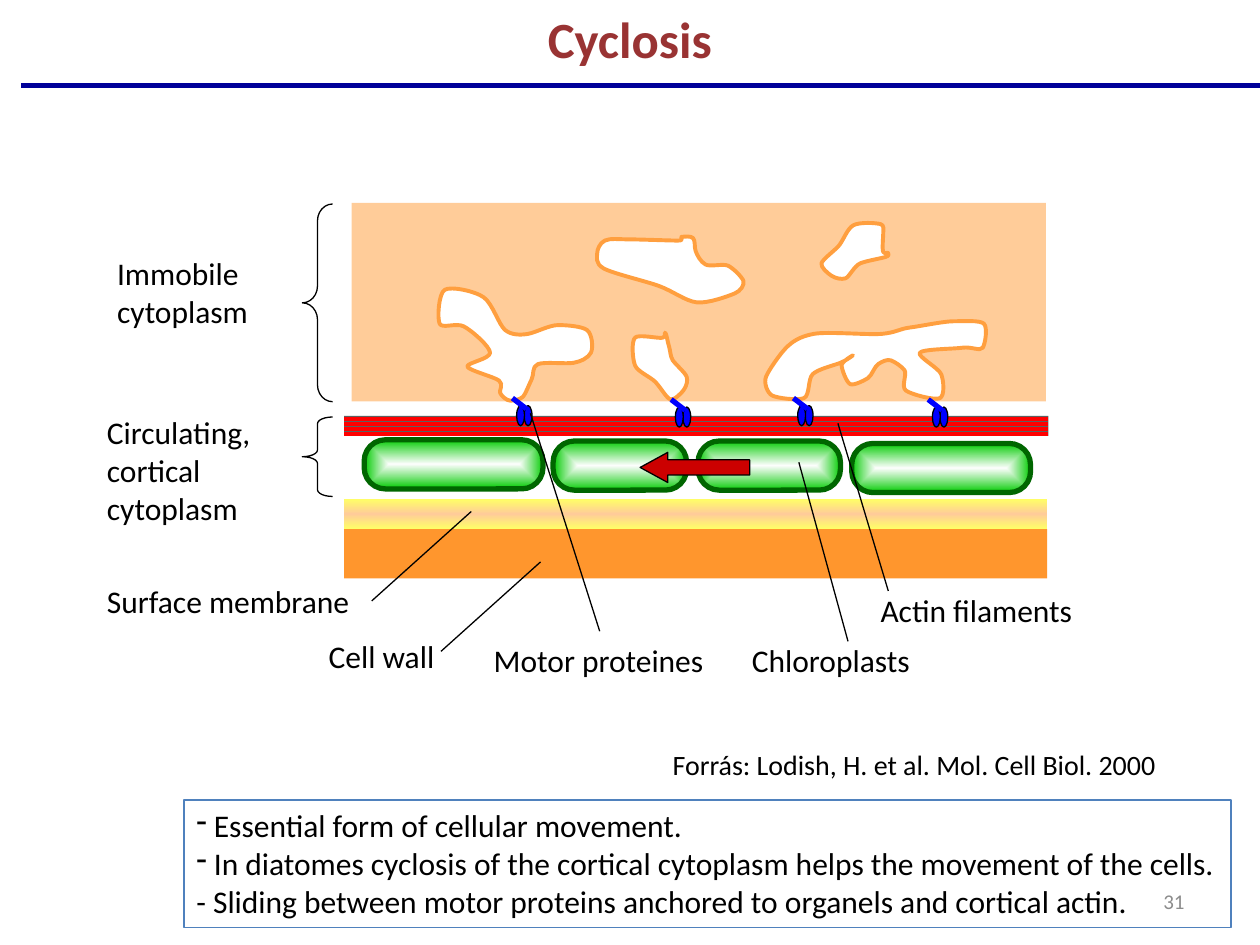
"""Build the Cyclosis slide: a labelled cell cortex diagram with a summary box."""
from lxml.etree import SubElement
from pptx import Presentation
from pptx.dml.color import RGBColor
from pptx.enum.dml import MSO_PATTERN
from pptx.enum.shapes import MSO_CONNECTOR, MSO_SHAPE as SHAPE
from pptx.enum.text import MSO_ANCHOR as ANCHOR, MSO_AUTO_SIZE as AUTO_SIZE, PP_ALIGN as ALIGN
from pptx.oxml.ns import qn
from pptx.util import Pt

FONT = "Calibri"
BLACK = RGBColor(0x00, 0x00, 0x00)
WHITE = RGBColor(0xFF, 0xFF, 0xFF)
GREY = RGBColor(0x8C, 0x8C, 0x8C)
MAROON = RGBColor(0x99, 0x33, 0x33)
NAVY = RGBColor(0x00, 0x00, 0x99)
STEEL = RGBColor(0x4F, 0x81, 0xBD)
GREEN = RGBColor(0x00, 0xCC, 0x00)
DARK_GREEN = RGBColor(0x00, 0x66, 0x00)
RED = RGBColor(0xFF, 0x00, 0x00)
DARK_RED = RGBColor(0xCC, 0x00, 0x00)
SLATE = RGBColor(0x5F, 0x5F, 0x5F)
PEACH = RGBColor(0xFF, 0xCC, 0x99)
YELLOW = RGBColor(0xFF, 0xFF, 0x66)
ORANGE = RGBColor(0xFF, 0x96, 0x2D)
LIGHT_ORANGE = RGBColor(0xFF, 0x9F, 0x3F)
BLUE = RGBColor(0x00, 0x00, 0xFF)

TITLE = "Cyclosis"
LABELS = [
    (["Immobile", "cytoplasm"], (59.8, 141.8, 90, 51.1)),
    (["Circulating,", "cortical", "cytoplasm"], (54, 232.6, 101.5, 72.7)),
    (["Actin filaments"], (496.1, 334.1, 125.3, 28.8)),
    (["Chloroplasts"], (422.6, 362.9, 105.8, 28.8)),
    (["Cell wall"], (180.7, 360.7, 75.6, 28.8)),
    (["Surface membrane"], (54, 329, 154.8, 28.8)),
    (["Motor proteines"], (275, 362.9, 135.4, 28.8)),
]
SOURCE = "Forrás: Lodish, H. et al. Mol. Cell Biol. 2000"
SUMMARY = [
    " Essential form of cellular movement.",
    " In diatomes cyclosis of the cortical cytoplasm helps the movement of the cells.",
    "- Sliding between motor proteins anchored to organels and cortical actin.",
]
DASHED_COUNT = 2
PAGE_NUMBER = "31"

CHLOROPLASTS = [(208.1, 251.3, 102.2), (316.1, 252, 76.3), (398.9, 252, 81.4), (486.7, 253.4, 102.2)]
MOTORS = [(295.2, 231.8), (385.9, 232.6), (455.8, 231.8), (532.8, 232.6)]
BRACES = [((172.8, 116.6, 17.3, 113), 0.556), ((172.8, 238.3, 17.3, 45.4), 0.222)]
POINTERS = [
    ((212.4, 343.4), (269.3, 292.3)),
    ((252, 372.2), (308.9, 321.1)),
    ((507.6, 337.7), (478.8, 241.9)),
    ((484.6, 366.5), (456.5, 264.2)),
    ((342.7, 360.7), (303.1, 236.2)),
]
ORGANELLE_UNIT = Pt(0.72)
SMOOTHING = 1 / 7
ORGANELLES = [
    [(396, 302), (371, 291), (389, 280), (368, 259), (349, 257), (353, 230), (384, 236), (401, 262),
     (419, 265), (443, 258), (466, 262), (469, 280), (455, 288), (427, 289), (422, 301), (415, 315),
     (405, 318), (397, 312)],
    [(538, 191), (499, 190), (480, 191), (474, 201), (479, 213), (523, 227), (553, 240), (583, 233),
     (590, 223), (578, 211), (560, 210), (552, 199), (550, 189), (541, 188)],
    [(677, 282), (668, 290), (675, 305), (689, 300), (697, 289), (707, 286), (718, 294), (719, 310),
     (746, 316), (747, 297), (730, 280), (764, 276), (780, 276), (781, 257), (757, 255), (722, 260),
     (700, 265), (646, 265), (624, 276), (608, 299), (613, 314), (638, 316), (645, 297), (667, 288)],
    [(701, 200), (701, 185), (699, 178), (677, 179), (665, 196), (652, 209), (660, 219), (671, 221),
     (683, 209), (703, 204), (705, 201)],
    [(526, 268), (504, 268), (504, 290), (520, 303), (532, 317), (543, 309), (545, 299), (534, 286),
     (531, 275), (528, 264)],
]


def finish(shape, fill=None, line=None, width=0.75):
    shape.shadow.inherit = False
    if fill is not None:
        shape.fill.solid()
        shape.fill.fore_color.rgb = fill
    if line is None:
        shape.line.fill.background()
    else:
        shape.line.color.rgb = line
        shape.line.width = Pt(width)
    return shape


def add_preset(shapes, kind, box, adjustments=(), **look):
    shape = shapes.add_shape(kind, *map(Pt, box))
    for index, value in enumerate(adjustments):
        shape.adjustments[index] = value
    return finish(shape, **look)


def add_line(shapes, start, end, color=BLACK, width=0.75):
    line = shapes.add_connector(MSO_CONNECTOR.STRAIGHT, *map(Pt, start + end))
    line.line.color.rgb = color
    line.line.width = Pt(width)
    SubElement(line._element.spPr, qn("a:effectLst"))


def set_gradient(shape, stops, radial=False):
    gradient = shape._element.spPr.makeelement(qn("a:gradFill"), {"rotWithShape": "1"})
    stop_list = SubElement(gradient, qn("a:gsLst"))
    for position, color, alpha in stops:
        stop = SubElement(stop_list, qn("a:gs"), pos=str(position * 1000))
        tint = SubElement(stop, qn("a:srgbClr"), val=str(color))
        if alpha < 100:
            SubElement(tint, qn("a:alpha"), val=str(alpha * 1000))
    if radial:
        focus = SubElement(gradient, qn("a:path"), {"path": "shape"})
        SubElement(focus, qn("a:fillToRect"), dict.fromkeys("ltrb", "50000"))
    else:
        SubElement(gradient, qn("a:lin"), ang="5400000", scaled="1")
    shape._element.spPr.insert(2, gradient)


def smooth_curve(points):
    curve = []
    for index, start in enumerate(points):
        before = points[index - 1]
        end, after = (points[(index + step) % len(points)] for step in (1, 2))
        curve.append(tuple(s + (e - b) * SMOOTHING for b, s, e in zip(before, start, end)))
        curve.append(tuple(e - (a - s) * SMOOTHING for s, e, a in zip(start, end, after)))
        curve.append(end)
    return curve


def add_organelle(shapes, points):
    builder = shapes.build_freeform(*points[0], scale=ORGANELLE_UNIT)
    builder.add_line_segments(smooth_curve(points), close=True)
    shape = finish(builder.convert_to_shape(), WHITE, LIGHT_ORANGE, 2.25)
    segments = shape._element.xpath(".//a:lnTo")
    for triple in zip(segments[::3], segments[1::3], segments[2::3]):
        curve = triple[0].makeelement(qn("a:cubicBezTo"))
        triple[0].addprevious(curve)
        for segment in triple:
            curve.append(segment[0])
            segment.getparent().remove(segment)


def style_text(frame, size, color=BLACK, align=ALIGN.LEFT, bold=False):
    for paragraph in frame.paragraphs:
        paragraph.alignment = align
        for run in paragraph.runs:
            run.font.name, run.font.size, run.font.bold = FONT, Pt(size), bold
            run.font.color.rgb = color


def add_text(shapes, lines, box, size, wrap=False, color=BLACK, align=ALIGN.LEFT):
    shape = shapes.add_textbox(*map(Pt, box))
    frame = shape.text_frame
    frame.text = "\n".join(lines)
    frame.word_wrap = wrap
    frame.auto_size = AUTO_SIZE.NONE if wrap else AUTO_SIZE.SHAPE_TO_FIT_TEXT
    style_text(frame, size, color, align)
    return shape


def main():
    presentation = Presentation()
    presentation.slide_width, presentation.slide_height = Pt(720), Pt(540)
    slide = presentation.slides.add_slide(presentation.slide_layouts[5])
    shapes = slide.shapes

    title = shapes.title
    title.left, title.top, title.width, title.height = map(Pt, (36, 0.7, 648, 54))
    title.text_frame.text = TITLE
    title.text_frame.vertical_anchor = ANCHOR.TOP
    title.text_frame.auto_size = AUTO_SIZE.NONE
    style_text(title.text_frame, 29, MAROON, ALIGN.CENTER, bold=True)
    add_line(shapes, (12.2, 49), (720, 49), NAVY, 3)

    for lines, box in LABELS:
        finish(add_text(shapes, lines, box, 18), WHITE)
    add_text(shapes, [SOURCE], (377.3, 423.4, 323.3, 26.6), 16)

    for left, top, width in CHLOROPLASTS:
        chloroplast = add_preset(shapes, SHAPE.ROUNDED_RECTANGLE, (left, top, width, 28.1), [0.432],
                                 line=DARK_GREEN, width=3)
        set_gradient(chloroplast, [(0, WHITE, 92), (100, GREEN, 100)], radial=True)
    actin = add_preset(shapes, SHAPE.RECTANGLE, (196.6, 237.6, 402.5, 11.5))
    actin.fill.patterned()
    actin.fill.pattern = MSO_PATTERN.DARK_HORIZONTAL
    actin.fill.fore_color.rgb, actin.fill.back_color.rgb = RED, SLATE
    add_preset(shapes, SHAPE.RECTANGLE, (200.9, 115.9, 396.7, 113.4), fill=PEACH)
    wall = shapes.add_group_shape().shapes
    membrane = add_preset(wall, SHAPE.RECTANGLE, (196.6, 285.1, 401.8, 17.3))
    set_gradient(membrane, [(0, YELLOW, 100), (50, PEACH, 100), (100, YELLOW, 100)])
    add_preset(wall, SHAPE.RECTANGLE, (196.6, 302.4, 401.8, 28.1), fill=ORANGE)

    for points in ORGANELLES:
        add_organelle(shapes, points)
    for left, top in MOTORS:
        motor = shapes.add_group_shape().shapes
        for offset in (4.3, 0):
            add_preset(motor, SHAPE.OVAL, (left + offset, top, 4.5, 11.5), fill=BLUE, line=BLACK)
        add_line(motor, (left + 5.6, top + 1.8), (left - 2.4, top - 4.3), BLUE, 3)
    for box, curl in BRACES:
        add_preset(shapes, SHAPE.LEFT_BRACE, box, [curl, 0.5], line=BLACK).fill.background()
    for start, end in POINTERS:
        add_line(shapes, start, end)
    add_preset(shapes, SHAPE.LEFT_ARROW, (365.8, 258.5, 62.6, 17.3), [0.5, 0.917], fill=DARK_RED, line=BLACK)

    summary = finish(add_text(shapes, SUMMARY, (105.1, 457.2, 598.3, 72.7), 18, wrap=True), line=STEEL)
    for paragraph in summary.text_frame.paragraphs[:DASHED_COUNT]:
        SubElement(paragraph._p.get_or_add_pPr(), qn("a:buChar"), char="-")
    number = add_text(shapes, [PAGE_NUMBER], (516.2, 500.4, 167.8, 28.8), 12, True, GREY, ALIGN.RIGHT)
    number.text_frame.vertical_anchor = ANCHOR.MIDDLE
    presentation.save("out.pptx")


if __name__ == "__main__":
    main()
